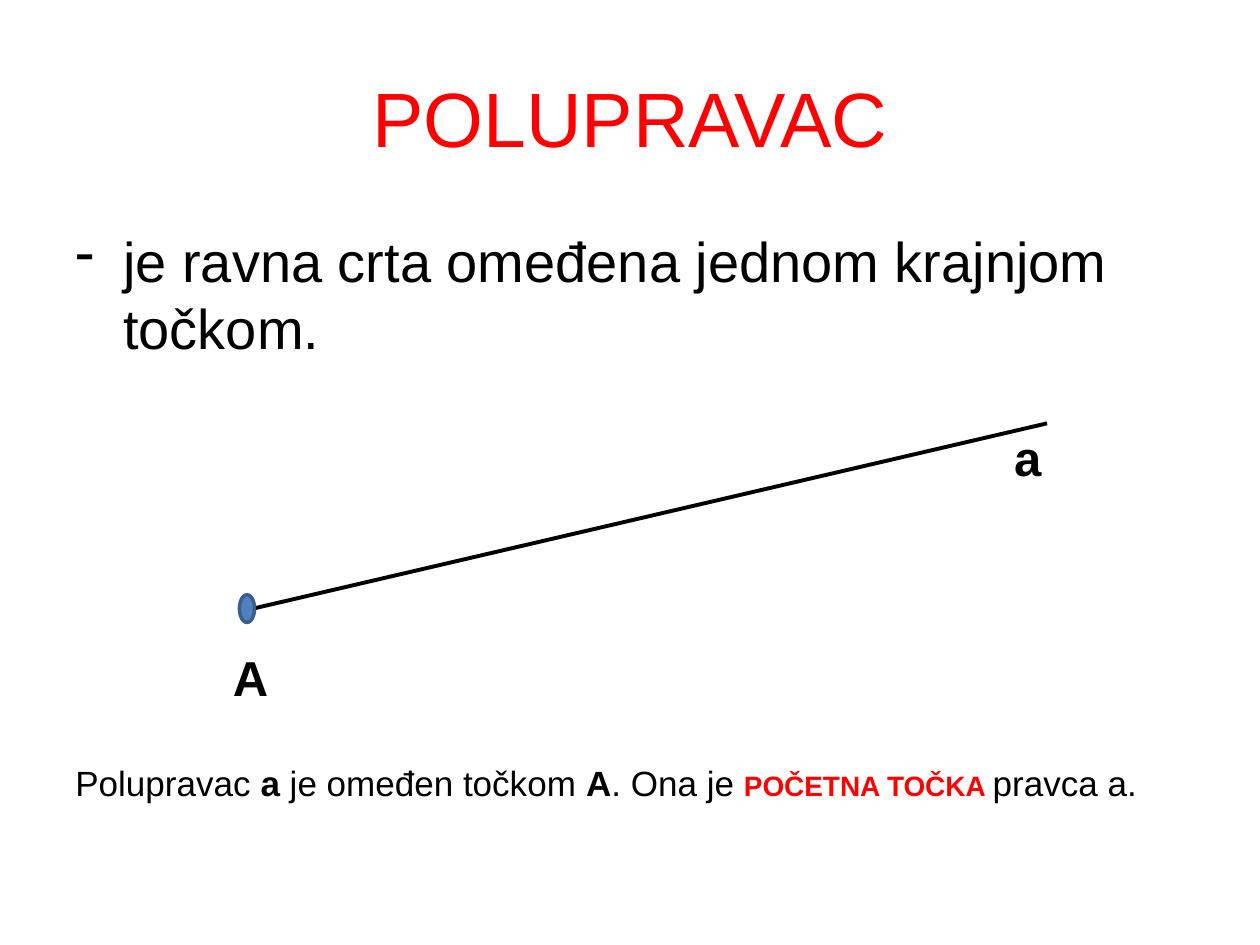
from dataclasses import dataclass

from lxml.etree import SubElement
from pptx import Presentation
from pptx.dml.color import RGBColor
from pptx.enum.shapes import MSO_CONNECTOR, MSO_SHAPE
from pptx.enum.text import MSO_ANCHOR, PP_ALIGN
from pptx.oxml.ns import qn
from pptx.util import Inches, Pt

BLACK, RED = "000000", "FF0000"
POINT_FILL, POINT_EDGE = "4F81BD", "3A5F8C"


@dataclass(frozen=True)
class Span:
    text: str
    size: float = 20
    bold: bool = False
    color: str = BLACK


@dataclass(frozen=True)
class Label:
    text: str
    left: float
    top: float
    width: float
    height: float = 0.57


LABELS = [Label("a", 7.95, 3.34, 0.41), Label("A", 1.75, 5.09, 0.48)]
CONCLUSION = [
    Span("Polupravac "),
    Span("a", bold=True),
    Span(" je omeđen točkom "),
    Span("A", bold=True),
    Span(". Ona je "),
    Span("POČETNA TOČKA ", 16, True, RED),
    Span("pravca a."),
]


def rgb(value: str) -> RGBColor:
    return RGBColor.from_string(value)


def add_frame(page, left: float, top: float, width: float, height: float, wrap=True):
    box = page.shapes.add_textbox(*map(Inches, (left, top, width, height)))
    box.text_frame.word_wrap = wrap
    return box.text_frame


def write(para, spans: list[Span]) -> None:
    for span in spans:
        run = para.add_run()
        run.text = span.text
        formats = {"name": "Arial", "size": Pt(span.size), "bold": span.bold}
        for name, value in formats.items():
            setattr(run.font, name, value)
        run.font.color.rgb = rgb(span.color)


def add_dash(para, indent: float) -> None:
    """Give the paragraph a hanging dash bullet."""
    properties = para._p.get_or_add_pPr()
    properties.set("marL", str(Inches(indent)))
    properties.set("indent", str(-Inches(indent)))
    SubElement(properties, qn("a:buChar")).set("char", "-")


def add_title(page) -> None:
    frame = add_frame(page, 0.5, 0.3, 9, 1.25)
    frame.vertical_anchor = MSO_ANCHOR.MIDDLE
    para = frame.paragraphs[0]
    para.alignment = PP_ALIGN.CENTER
    write(para, [Span("POLUPRAVAC", 44, color=RED)])


def add_body(page) -> None:
    """Write the definition and, below the drawing, the conclusion."""
    frame = add_frame(page, 0.5, 1.75, 9, 4.95)
    definition = frame.paragraphs[0]
    definition.space_before = Pt(6)
    add_dash(definition, 0.38)
    write(definition, [Span("je ravna crta omeđena jednom krajnjom točkom.", 32)])
    conclusion = frame.add_paragraph()
    conclusion.space_before = Pt(229)
    write(conclusion, CONCLUSION)


def add_ray(page) -> None:
    ends = map(Inches, (2.01, 4.83, 8.31, 3.36))
    ray = page.shapes.add_connector(MSO_CONNECTOR.STRAIGHT, *ends)
    ray.line.color.rgb = rgb(BLACK)
    ray.line.width = Pt(2.25)
    SubElement(ray._element.spPr, qn("a:effectLst"))


def add_start_point(page) -> None:
    place = map(Inches, (1.9, 4.72, 0.12, 0.22))
    point = page.shapes.add_shape(MSO_SHAPE.FLOWCHART_CONNECTOR, *place)
    point.shadow.inherit = False
    point.fill.solid()
    point.fill.fore_color.rgb = rgb(POINT_FILL)
    point.line.color.rgb = rgb(POINT_EDGE)
    point.line.width = Pt(2)


def add_label(page, label: Label) -> None:
    frame = add_frame(page, label.left, label.top, label.width, label.height, wrap=False)
    write(frame.paragraphs[0], [Span(label.text, 28, True)])


def main() -> None:
    deck = Presentation()
    deck.slide_width, deck.slide_height = Inches(10), Inches(7.5)
    page = deck.slides.add_slide(deck.slide_layouts[6])
    add_title(page)
    add_body(page)
    add_ray(page)
    add_start_point(page)
    for label in LABELS:
        add_label(page, label)
    deck.save("out.pptx")


if __name__ == "__main__":
    main()
